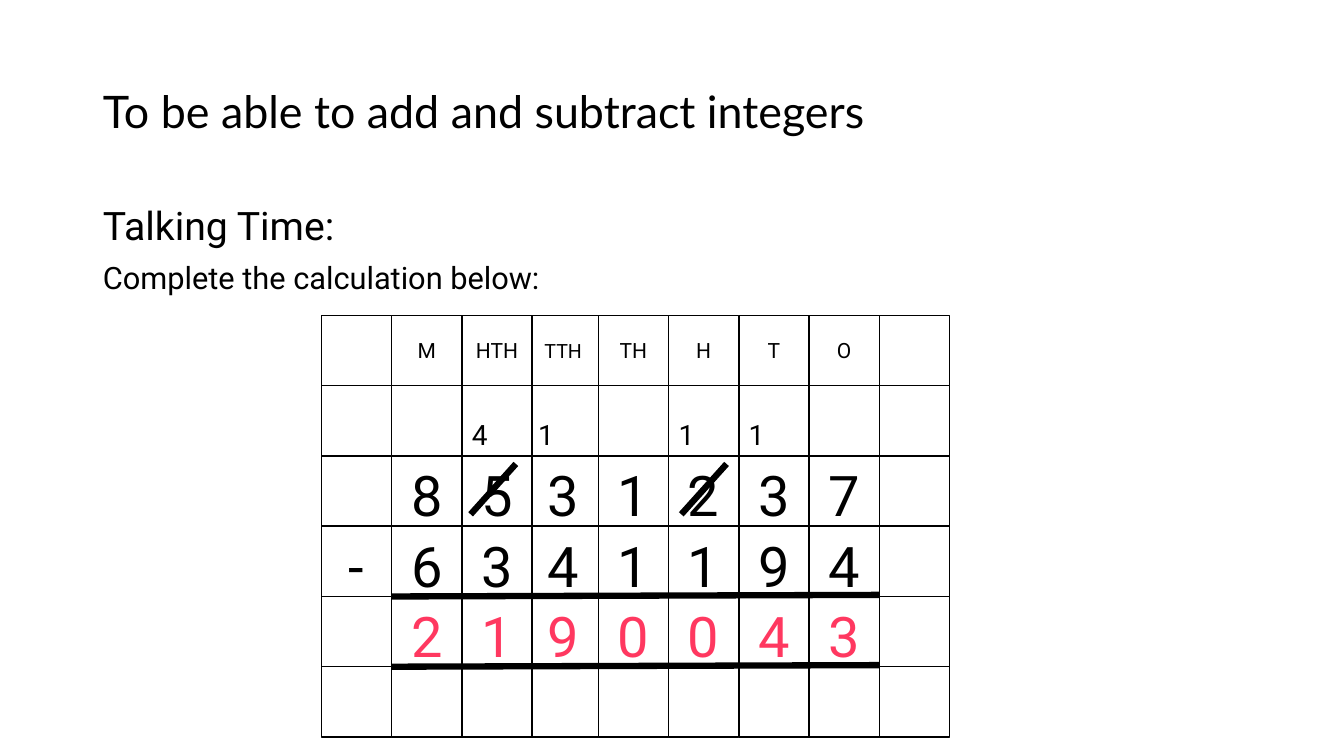
from lxml.etree import SubElement
from pptx import Presentation
from pptx.dml.color import RGBColor
from pptx.enum.shapes import MSO_CONNECTOR, MSO_SHAPE
from pptx.enum.text import MSO_ANCHOR as Anchor, MSO_AUTO_SIZE, PP_ALIGN as Align
from pptx.oxml.ns import qn
from pptx.util import Cm, Pt

COLORS = {"ink": "000000", "paper": "FFFFFF", "answer": "FF3860"}
CELL = 1.77
RIGHT_GROUP_COLUMN = 3
RIGHT_GROUP_OFFSET = 5.21
RULE_RISE = 0.04

HEADINGS = ["", "M", "HTH", "TTH", "TH", "H", "T", "O", ""]
EXCHANGES = ["", "", "4", "1", "", "1", "1", "", ""]
MINUEND = ["", "8", "5", "3", "1", "2", "3", "7", ""]
SUBTRAHEND = ["-", "6", "3", "4", "1", "1", "9", "4", ""]
ANSWER = ["", "2", "1", "9", "0", "0", "4", "3", ""]
SPARE = [""] * 9

# values, size, colour, anchor, alignment
ROWS = [
    (HEADINGS, 15, "ink", Anchor.MIDDLE, Align.CENTER),
    (EXCHANGES, 20, "ink", Anchor.BOTTOM, Align.LEFT),
    (MINUEND, 40, "ink", Anchor.TOP, Align.CENTER),
    (SUBTRAHEND, 40, "ink", Anchor.TOP, Align.CENTER),
    (ANSWER, 40, "answer", Anchor.TOP, Align.CENTER),
    (SPARE, 40, "ink", Anchor.TOP, Align.CENTER),
]


def rgb(name):
    return RGBColor.from_string(COLORS[name])


def place(shape, box):
    shape.left, shape.top, shape.width, shape.height = (Cm(length) for length in box)


def style(paragraph, size, font="Roboto", color="ink"):
    for run in paragraph.runs:
        run.font.size = Pt(size)
        run.font.name = font
        run.font.color.rgb = rgb(color)


def add_objective(slide, box):
    objective = slide.shapes.title
    place(objective, box)
    frame = objective.text_frame
    frame.text = "To be able to add and subtract integers"
    frame.auto_size = MSO_AUTO_SIZE.NONE
    frame.vertical_anchor = Anchor.MIDDLE
    line = frame.paragraphs[0]
    line.alignment = Align.LEFT
    line.line_spacing = 0.9
    style(line, 32, "Lato")


def add_task(slide, box):
    task = slide.placeholders[1]
    place(task, box)
    frame = task.text_frame
    frame.text = "Talking Time:\nComplete the calculation below:"
    frame.auto_size = MSO_AUTO_SIZE.NONE
    frame.vertical_anchor = Anchor.TOP
    for line, size, gap in zip(frame.paragraphs, (28, 22), (0, 10)):
        properties = line._p.get_or_add_pPr()
        properties.set("marL", "0")
        properties.set("indent", "0")
        SubElement(properties, qn("a:buNone"))
        line.line_spacing = 0.9
        line.space_before = Pt(gap)
        style(line, size)


def add_cell(slide, x, y, value, size, color, anchor, alignment):
    cell = slide.shapes.add_shape(MSO_SHAPE.RECTANGLE, Cm(x), Cm(y), Cm(CELL), Cm(CELL))
    cell.shadow.inherit = False
    cell.fill.solid()
    cell.fill.fore_color.rgb = rgb("paper")
    cell.line.color.rgb = rgb("ink")
    cell.line.width = Pt(1)
    if value:
        frame = cell.text_frame
        frame.text = value
        frame.vertical_anchor = anchor
        frame.paragraphs[0].alignment = alignment
        style(frame.paragraphs[0], size, color=color)


def add_stroke(slide, x1, y1, x2, y2):
    ends = (Cm(length) for length in (x1, y1, x2, y2))
    stroke = slide.shapes.add_connector(MSO_CONNECTOR.STRAIGHT, *ends)
    stroke.line.color.rgb = rgb("ink")
    stroke.line.width = Pt(4.5)
    SubElement(stroke._element.spPr, qn("a:effectLst"))


def add_calculation(slide, left, top):
    """Draw the squared-paper subtraction with its rules and crossed-out digits."""

    def column_left(column):
        if column < RIGHT_GROUP_COLUMN:
            return left + column * CELL
        return left + RIGHT_GROUP_OFFSET + (column - RIGHT_GROUP_COLUMN) * CELL

    def row_top(row):
        return top + row * CELL

    # The left columns overlap the right group, so they are drawn last.
    for column in reversed(range(len(HEADINGS))):
        for row, (values, size, color, anchor, alignment) in enumerate(ROWS):
            value = values[column]
            add_cell(slide, column_left(column), row_top(row), value,
                     14 if value == "TTH" else size, color, anchor, alignment)

    for row in (4, 5):
        add_stroke(slide, column_left(1), row_top(row),
                   column_left(8), row_top(row) - RULE_RISE)

    for column, inset in ((5, 0.32), (2, 0.22)):
        x, y = column_left(column) + inset, row_top(2)
        add_stroke(slide, x, y + 1.47, x + 1.14, y + 0.2)


def main():
    deck = Presentation()
    deck.slide_width, deck.slide_height = Cm(33.87), Cm(19.05)
    slide = deck.slides.add_slide(deck.slide_layouts[1])
    add_objective(slide, (2.34, 1.02, 24.38, 3.68))
    add_task(slide, (2.34, 5.08, 29.21, 12.09))
    add_calculation(slide, 8.1, 7.95)
    deck.save("out.pptx")


if __name__ == "__main__":
    main()
